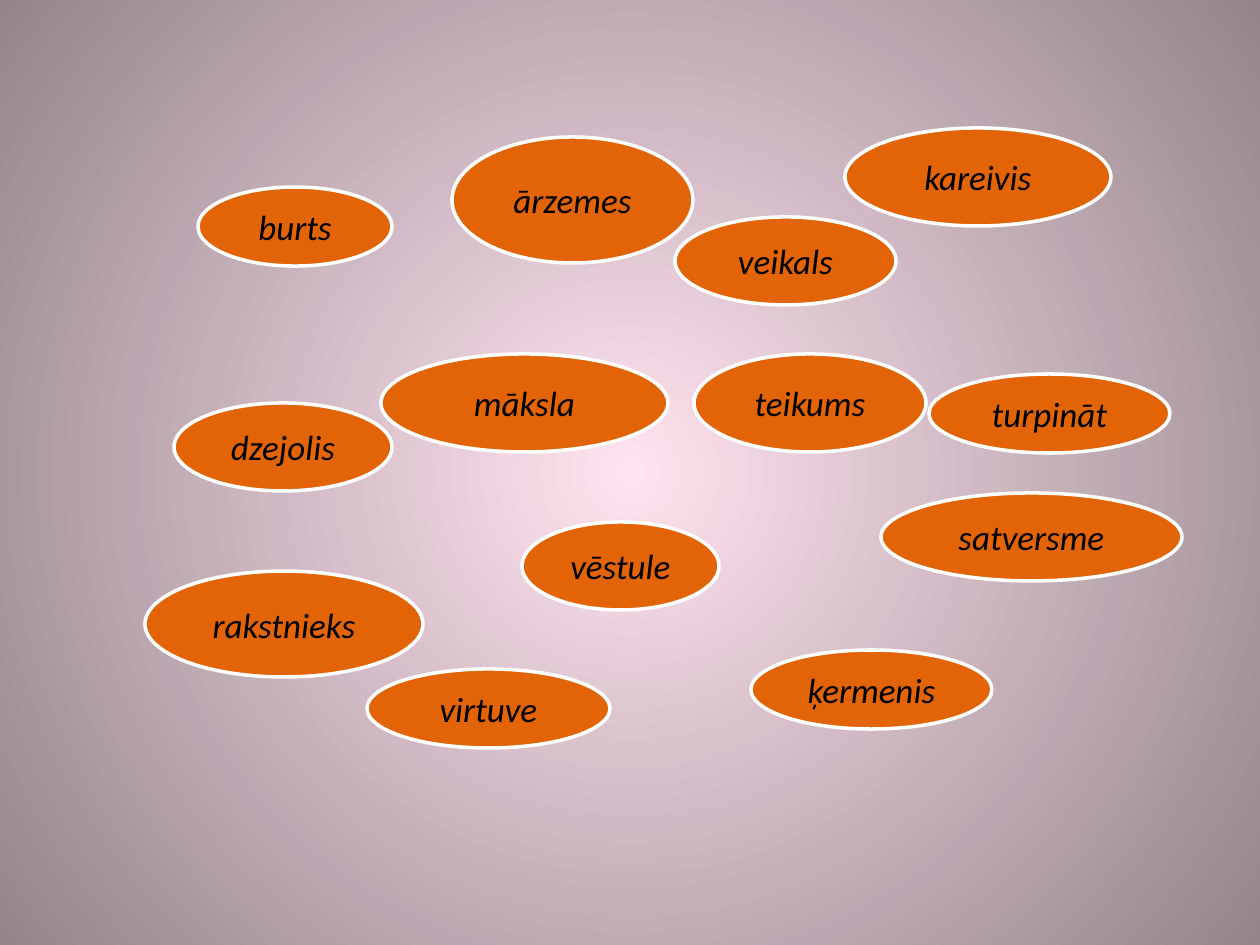
import lxml.etree
import pptx
import pptx.dml.color
import pptx.enum.shapes
import pptx.enum.text
import pptx.oxml.ns
import pptx.util

PX = 914400 / 126
ORANGE = pptx.dml.color.RGBColor(0xE3, 0x64, 0x06)
WHITE = pptx.dml.color.RGBColor(0xFF, 0xFF, 0xFF)
BLACK = pptx.dml.color.RGBColor(0x00, 0x00, 0x00)
PINK = pptx.dml.color.RGBColor(0xFF, 0xE3, 0xF0)
MAUVE = pptx.dml.color.RGBColor(0x94, 0x85, 0x8C)

WORDS = [
    ("kareivis", 845, 128, 266, 98),
    ("burts", 198, 187, 194, 79),
    ("māksla", 381, 354, 287, 98),
    ("ārzemes", 452, 137, 241, 126),
    ("teikums", 694, 354, 232, 98),
    ("veikals", 675, 217, 221, 88),
    ("rakstnieks", 145, 571, 278, 106),
    ("virtuve", 367, 669, 243, 79),
    ("ķermenis", 751, 650, 241, 79),
    ("dzejolis", 174, 403, 218, 88),
    ("vēstule", 522, 522, 197, 88),
    ("turpināt", 929, 374, 241, 79),
    ("satversme", 881, 493, 301, 88),
]


def emu(px):
    return pptx.util.Emu(round(px * PX))


def paint_background(slide):
    glow = slide.background.fill
    glow.gradient()
    for stop, color, position in zip(glow.gradient_stops, (PINK, MAUVE), (0, 1)):
        stop.color.rgb = color
        stop.position = position
    qn = pptx.oxml.ns.qn
    gradient = slide.element.find(".//" + qn("a:gradFill"))
    gradient.remove(gradient.find(qn("a:lin")))
    circle = lxml.etree.Element(qn("a:path"), path="circle")
    lxml.etree.SubElement(
        circle, qn("a:fillToRect"), l="50000", t="50000", r="50000", b="50000"
    )
    gradient.find(qn("a:gsLst")).addnext(circle)


def add_word(slide, word, left, top, width, height):
    bubble = slide.shapes.add_shape(
        pptx.enum.shapes.MSO_SHAPE.OVAL, emu(left), emu(top), emu(width), emu(height)
    )
    bubble.shadow.inherit = False
    bubble.fill.solid()
    bubble.fill.fore_color.rgb = ORANGE
    bubble.line.color.rgb = WHITE
    bubble.line.width = pptx.util.Pt(2)
    frame = bubble.text_frame
    frame.text = word
    frame.vertical_anchor = pptx.enum.text.MSO_ANCHOR.MIDDLE
    label = frame.paragraphs[0]
    label.alignment = pptx.enum.text.PP_ALIGN.CENTER
    font = label.runs[0].font
    font.name = "Calibri"
    font.size = pptx.util.Pt(20)
    font.italic = True
    font.color.rgb = BLACK


def add_word_cloud(slide, left, top, words):
    for word, x, y, width, height in words:
        add_word(slide, word, left + x, top + y, width, height)


def main():
    deck = pptx.Presentation()
    deck.slide_width = emu(1260)
    deck.slide_height = emu(945)
    slide = deck.slides.add_slide(deck.slide_layouts[6])
    paint_background(slide)
    add_word_cloud(slide, 0, 0, WORDS)
    deck.save("out.pptx")


if __name__ == "__main__":
    main()
